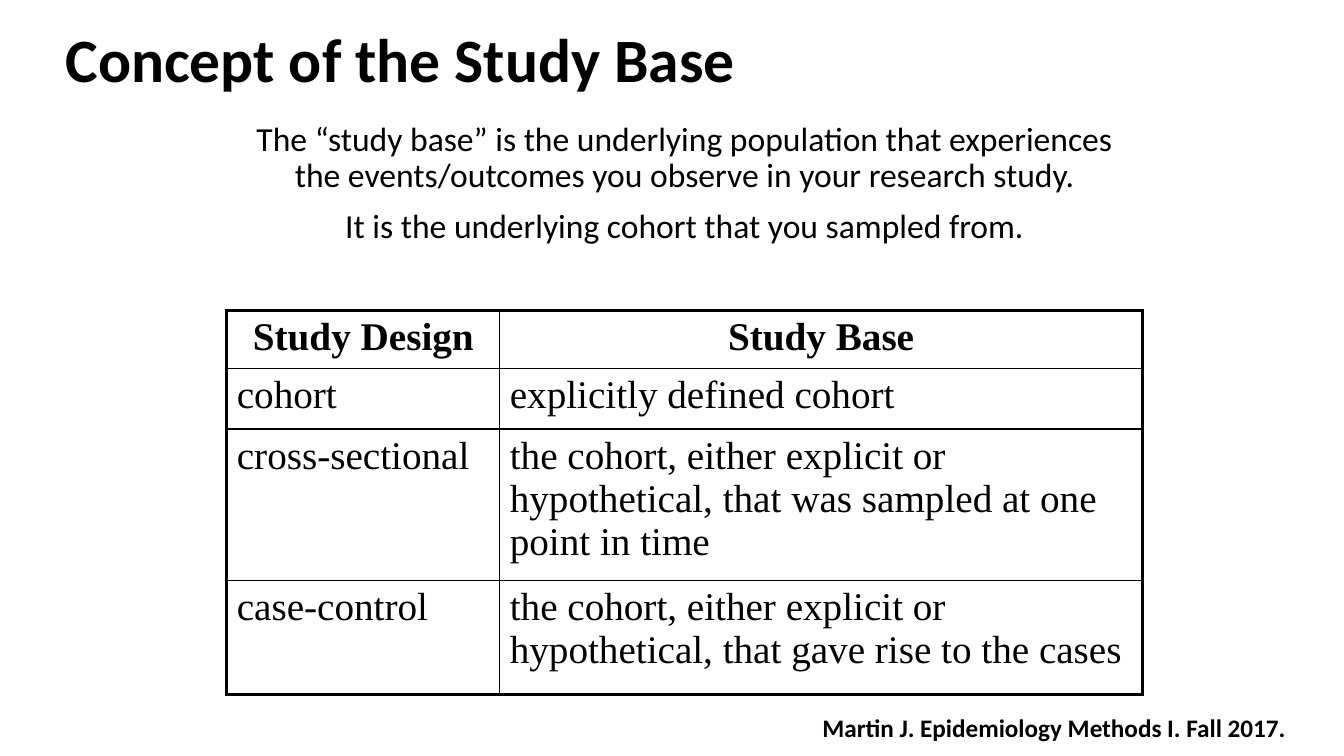
import dataclasses

import lxml.etree
import pptx
import pptx.dml.color
import pptx.enum.text
import pptx.oxml.ns
import pptx.util

Pt = pptx.util.Pt
ALIGN = pptx.enum.text.PP_ALIGN
ANCHOR = pptx.enum.text.MSO_ANCHOR


@dataclasses.dataclass(frozen=True)
class Theme:
    ink: str = "000000"
    sans: str = "Calibri"
    serif: str = "Times New Roman"
    title_size: float = 44
    table_size: float = 28
    body_size: float = 24
    credit_size: float = 18
    frame_line: float = 2.25
    grid_line: float = 1


class SlideBuilder:
    """Holds the theme and the current slide."""

    def __init__(self, theme, page):
        self.theme = theme
        self.page = page

    def fill_text(self, frame, lines, size, font, bold=False, align=ALIGN.LEFT,
                  line_spacing=None, space_before=None):
        frame.word_wrap = True
        for index, line in enumerate(lines):
            para = frame.paragraphs[0] if index == 0 else frame.add_paragraph()
            para.text = line
            para.alignment = align
            para.line_spacing = line_spacing
            para.space_before = space_before
            para.font.size = Pt(size)
            para.font.name = font
            para.font.bold = bold
            para.font.color.rgb = pptx.dml.color.RGBColor.from_string(self.theme.ink)

    def title(self, text, left, top, width, height):
        box = self.page.shapes.title
        box.left, box.top, box.width, box.height = map(Pt, (left, top, width, height))
        box.text_frame.auto_size = pptx.enum.text.MSO_AUTO_SIZE.NONE
        box.text_frame.vertical_anchor = ANCHOR.MIDDLE
        self.fill_text(box.text_frame, [text], self.theme.title_size,
                       self.theme.sans, bold=True, line_spacing=0.9)

    def text(self, lines, left, top, width, height, size, **style):
        box = self.page.shapes.add_textbox(*map(Pt, (left, top, width, height)))
        self.fill_text(box.text_frame, lines, size, self.theme.sans, **style)

    def border(self, cell, side, width):
        properties = cell._tc.get_or_add_tcPr()
        line = lxml.etree.SubElement(properties, pptx.oxml.ns.qn("a:ln" + side),
                                     w=str(int(Pt(width))))
        fill = lxml.etree.SubElement(line, pptx.oxml.ns.qn("a:solidFill"))
        lxml.etree.SubElement(fill, pptx.oxml.ns.qn("a:srgbClr"), val=self.theme.ink)

    def table(self, rows, left, top, widths, heights):
        frame = self.page.shapes.add_table(
            len(rows), len(widths),
            *map(Pt, (left, top, sum(widths), sum(heights))))
        table = frame.table
        table.horz_banding = False
        for column, width in zip(table.columns, widths):
            column.width = Pt(width)
        last_row, last_column = len(rows) - 1, len(widths) - 1
        for r, (row, height) in enumerate(zip(rows, heights)):
            table.rows[r].height = Pt(height)
            for c, text in enumerate(row):
                cell = table.cell(r, c)
                header = r == 0
                self.fill_text(cell.text_frame, [text], self.theme.table_size,
                               self.theme.serif, bold=header,
                               align=ALIGN.CENTER if header else ALIGN.LEFT)
                # Heavy line on the outer edge, thin line inside
                outer = {"L": c == 0, "R": c == last_column,
                         "T": r == 0, "B": r == last_row}
                for side, on_edge in outer.items():
                    self.border(cell, side, self.theme.frame_line if on_edge
                                else self.theme.grid_line)
                cell.fill.background()


def main():
    deck = pptx.Presentation()
    deck.slide_width, deck.slide_height = Pt(960), Pt(540)
    theme = Theme()
    builder = SlideBuilder(theme, deck.slides.add_slide(deck.slide_layouts[5]))

    # Title and definition
    builder.title("Concept of the Study Base", 39.6, 0, 882.7, 90)
    builder.text(
        ["The “study base” is the underlying population that experiences "
         "the events/outcomes you observe in your research study.",
         "It is the underlying cohort that you sampled from."],
        162, 84, 654, 114, theme.body_size,
        align=ALIGN.CENTER, line_spacing=0.9, space_before=Pt(10))

    # Study base for each design
    builder.table(
        [("Study Design", "Study Base"),
         ("cohort", "explicitly defined cohort"),
         ("cross-sectional", "the cohort, either explicit or hypothetical, "
                             "that was sampled at one point in time"),
         ("case-control", "the cohort, either explicit or hypothetical, "
                          "that gave rise to the cases")],
        162, 222, widths=(195, 459), heights=(41, 43.5, 100, 81.5))

    # Course credit
    builder.text(["Martin J. Epidemiology Methods I. Fall 2017."],
                 580.3, 505.4, 380, 29, theme.credit_size, bold=True)

    deck.save("out.pptx")


if __name__ == "__main__":
    main()
